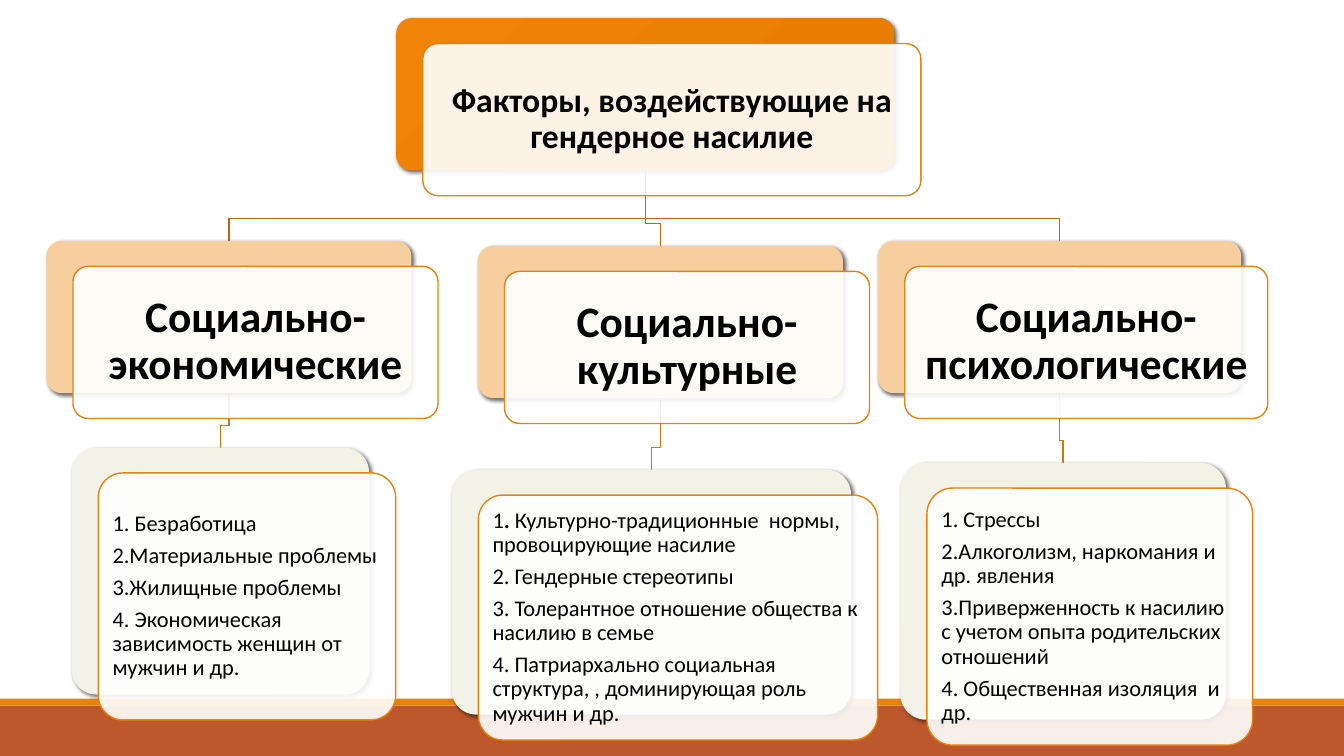
from dataclasses import dataclass

from lxml.etree import SubElement
from pptx import Presentation
from pptx.dml.color import RGBColor
from pptx.enum.shapes import MSO_SHAPE
from pptx.enum.text import MSO_ANCHOR, MSO_AUTO_SIZE, PP_ALIGN
from pptx.oxml.ns import qn
from pptx.util import Inches, Pt

ORANGE = RGBColor(0xE4, 0x83, 0x12)
RUST = RGBColor(0xBD, 0x58, 0x2C)
DEEP_ORANGE = RGBColor(0xE5, 0x7B, 0x00)
BRIGHT_ORANGE = RGBColor(0xEF, 0x84, 0x07)
PEACH = RGBColor(0xF7, 0xCE, 0x9D)
IVORY = RGBColor(0xF3, 0xF2, 0xE6)
UPPER_LINK = RGBColor(0xB7, 0x69, 0x0E)
LOWER_LINK = RGBColor(0xCF, 0x77, 0x10)
WHITE = RGBColor(0xFF, 0xFF, 0xFF)
BLACK = RGBColor(0, 0, 0)

FONT = "Calibri"
SLIDE_WIDTH, SLIDE_HEIGHT = Inches(13.33), Inches(7.5)
CARD_RIGHT, CARD_DOWN = 1.98, 3.36  # offset of a white card from its backing
ELBOW_RISE = 2.93  # height of a link's last leg


@dataclass
class Box:
    """A region in hundredths of the slide's width and height."""
    left: float
    top: float
    width: float
    height: float

    def emu(self):
        return (across(self.left), down(self.top),
                across(self.width), down(self.height))

    def shifted(self):
        return Box(self.left + CARD_RIGHT, self.top + CARD_DOWN,
                   self.width, self.height)

    @property
    def middle(self):
        return self.left + self.width / 2

    @property
    def bottom(self):
        return self.top + self.height


def across(share):
    return int(SLIDE_WIDTH * share / 100)


def down(share):
    return int(SLIDE_HEIGHT * share / 100)


# The root, then a heading, its text, a list box and its items for each branch
TITLE = "Факторы, воздействующие на гендерное насилие"
ROOT = Box(29.48, 2.4, 37.06, 20.13)
BRANCHES = [
    (Box(3.45, 31.87, 27.16, 20.13), "Социально-экономические",
     Box(5.33, 59.2, 22.13, 32.67),
     ["1. Безработица",
      "2.Материальные проблемы",
      "3.Жилищные проблемы",
      "4. Экономическая зависимость женщин от мужчин и др."]),
    (Box(35.56, 32.53, 27.16, 20.13), "Социально-культурные",
     Box(33.61, 62.13, 29.71, 32.4),
     ["1**. **Культурно-традиционные  нормы, провоцирующие насилие",
      "2. Гендерные стереотипы",
      "3. Толерантное отношение общества к насилию в семье",
      "4. Патриархально социальная структура, , доминирующая роль "
      "мужчин и др."]),
    (Box(65.34, 31.87, 27.01, 20.13), "Социально-психологические",
     Box(66.99, 61.2, 24.23, 34),
     ["1. Стрессы",
      "2.Алкоголизм, наркомания и др. явления",
      "3.Приверженность к насилию с учетом опыта родительских отношений",
      "4. Общественная изоляция  и др."]),
]


def write(shape, paragraphs, size, margin, bold=False, align=PP_ALIGN.LEFT):
    """Fill a shape with paragraphs; ** switches the weight."""
    frame = shape.text_frame
    frame.word_wrap = True
    frame.auto_size = MSO_AUTO_SIZE.NONE
    frame.vertical_anchor = MSO_ANCHOR.MIDDLE
    frame.margin_left = frame.margin_right = Inches(margin)
    frame.margin_top = frame.margin_bottom = Inches(margin)
    for index, text in enumerate(paragraphs):
        paragraph = frame.add_paragraph() if index else frame.paragraphs[0]
        paragraph.alignment = align
        paragraph.line_spacing = 0.9
        paragraph.space_before = Pt(0)
        paragraph.space_after = Pt(0.35 * size)
        for part, words in enumerate(text.split("**")):
            run = paragraph.add_run()
            run.text = words
            run.font.name = FONT
            run.font.size = Pt(size)
            run.font.bold = bold != (part % 2 == 1)
            run.font.color.rgb = BLACK


def add_block(slide, box, color, kind=MSO_SHAPE.ROUNDED_RECTANGLE):
    shape = slide.shapes.add_shape(kind, *box.emu())
    shape.shadow.inherit = False
    shape.fill.solid()
    shape.fill.fore_color.rgb = color
    shape.line.fill.background()
    if kind == MSO_SHAPE.ROUNDED_RECTANGLE:
        shape.adjustments[0] = 0.1
    return shape


def add_alpha(color_element, percent):
    SubElement(color_element, qn("a:alpha"), val=str(percent * 1000))


def add_shadow(shape):
    effects = shape.element.spPr.find(qn("a:effectLst"))
    shadow = SubElement(effects, qn("a:outerShdw"), blurRad=str(Pt(3)),
                        dist=str(Pt(2)), dir=str(45 * 60000), rotWithShape="0")
    add_alpha(SubElement(shadow, qn("a:srgbClr"), val=str(BLACK)), 60)


def add_card(slide, box, color):
    """A shadowed backing with a translucent outlined card in front."""
    backing = add_block(slide, box, color)
    add_shadow(backing)
    card = add_block(slide, box.shifted(), WHITE)
    add_alpha(card.element.spPr.find(".//" + qn("a:srgbClr")), 90)
    card.line.color.rgb = ORANGE
    card.line.width = Pt(1)
    return backing, card


def add_link(slide, parent, child, color):
    """An elbow from the parent's bottom to the child's top."""
    bend = down(child.top - ELBOW_RISE)
    start, end = across(parent.middle), across(child.middle)
    builder = slide.shapes.build_freeform(start, down(parent.bottom))
    builder.add_line_segments(
        [(start, bend), (end, bend), (end, down(child.top))], close=False)
    link = builder.convert_to_shape()
    link.shadow.inherit = False
    link.fill.background()
    link.line.color.rgb = color
    link.line.width = Pt(1)


def add_footer(slide):
    add_block(slide, Box(0, 93.33, 100, 6.67), RUST, MSO_SHAPE.RECTANGLE)
    add_block(slide, Box(0, 92.4, 100, 0.93), ORANGE, MSO_SHAPE.RECTANGLE)


def add_root(slide, box):
    backing, card = add_card(slide, box, DEEP_ORANGE)
    backing.fill.gradient()
    backing.fill.gradient_angle = 315
    for stop, color in zip(backing.fill.gradient_stops,
                           (BRIGHT_ORANGE, DEEP_ORANGE)):
        stop.color.rgb = color
    # The title lies on the card, in front of it
    title = slide.shapes.title
    title.left, title.top, title.width, title.height = box.shifted().emu()
    write(title, [TITLE], 24, 0.14, bold=True, align=PP_ALIGN.CENTER)
    card.element.addnext(title.element)


def add_branch(slide, heading_box, heading, list_box, items):
    card = add_card(slide, heading_box, PEACH)[1]
    write(card, [heading], 31, 0.13, bold=True, align=PP_ALIGN.CENTER)
    card = add_card(slide, list_box, IVORY)[1]
    write(card, items, 16, 0.07)


def main():
    presentation = Presentation()
    presentation.slide_width = SLIDE_WIDTH
    presentation.slide_height = SLIDE_HEIGHT
    slide = presentation.slides.add_slide(presentation.slide_layouts[5])
    add_footer(slide)
    # Links go behind all cards
    for heading_box, _, list_box, _ in BRANCHES:
        add_link(slide, heading_box, list_box, LOWER_LINK)
        add_link(slide, ROOT, heading_box, UPPER_LINK)
    add_root(slide, ROOT)
    for branch in BRANCHES:
        add_branch(slide, *branch)
    presentation.save("out.pptx")


if __name__ == "__main__":
    main()
